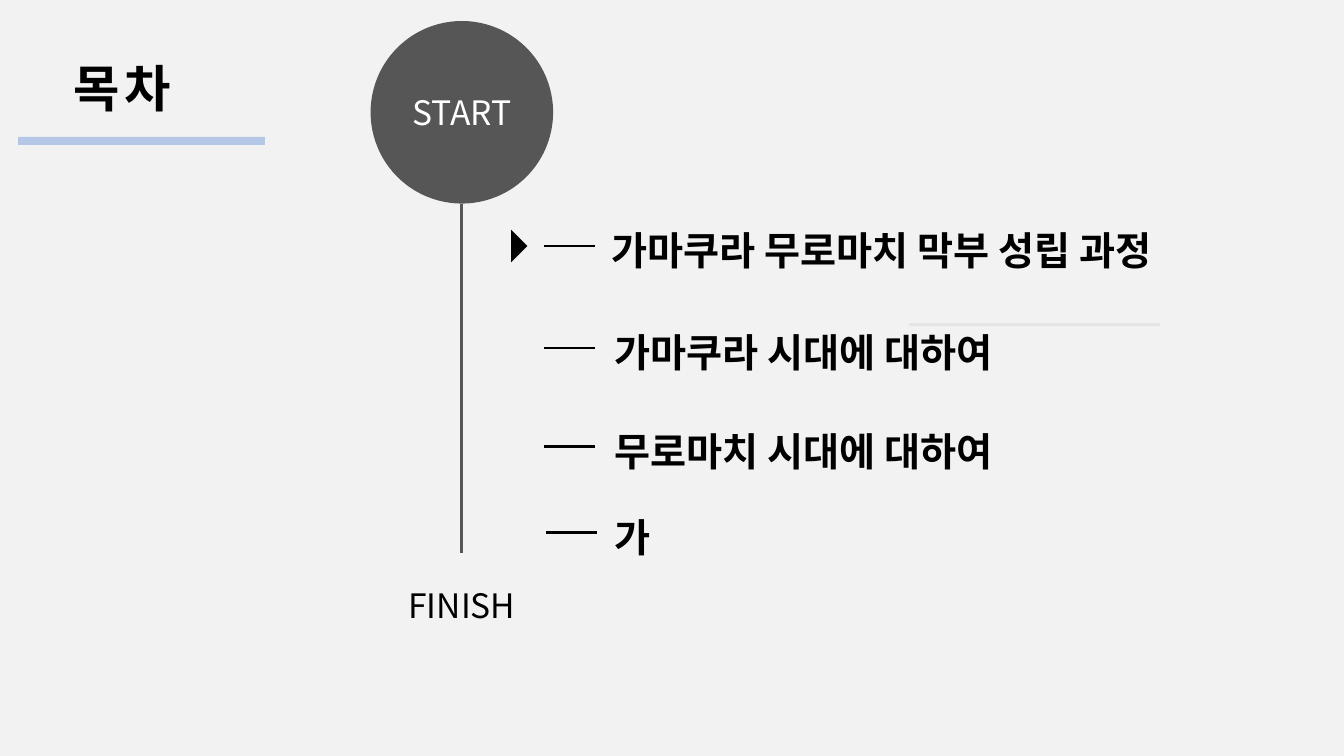
from lxml import etree
from pptx import Presentation
from pptx import util as u
from pptx.dml.color import RGBColor
from pptx.enum import shapes, text
from pptx.oxml import ns

COLOURS = {"page": "F2F2F2", "accent": "B4C7E7", "grey": "565656",
           "rule": "E5E5E5", "black": "000000", "white": "FFFFFF"}
FONT = "Noto Sans CJK KR"
ENTRIES = [
    ("가마쿠라 무로마치 막부 성립 과정", 5.97, 0, 1.6, 16.28),
    ("가마쿠라 시대에 대하여", 8.54, 0, 1.67, 11.4),
    ("무로마치 시대에 대하여", 11.03, 0, 1.67, 11.63),
    ("가", 13.19, 0.05, 1.62, 11.63),
]


def colour(name):
    """Return a named colour of the slide."""
    return RGBColor.from_string(COLOURS[name])


def paint(shape, name):
    """Fill a shape with a flat colour, without outline or shadow."""
    shape.shadow.inherit = False
    shape.fill.solid()
    shape.fill.fore_color.rgb = colour(name)
    shape.line.fill.background()


def add_line(page, left, top, right, bottom, name):
    """Draw a flat two-point line between two positions in centimetres."""
    line = page.shapes.add_connector(
        shapes.MSO_CONNECTOR.STRAIGHT, u.Cm(left), u.Cm(top), u.Cm(right), u.Cm(bottom))
    line.line.color.rgb = colour(name)
    line.line.width = u.Pt(2)
    properties = line._element.find(ns.qn("p:spPr"))
    etree.SubElement(properties, ns.qn("a:effectLst"))


def write(para, words, size, name, bold=False):
    """Add one run in the slide's font and return it."""
    span = para.add_run()
    span.text = words
    span.font.size = u.Pt(size)
    span.font.bold = bold
    span.font.color.rgb = colour(name)
    span.font.name = FONT
    etree.SubElement(span.font._element, ns.qn("a:ea"), typeface=FONT)
    return span


def add_text(page, left, top, width, height):
    """Add a text box with narrow margins and return its frame."""
    box = page.shapes.add_textbox(u.Cm(left), u.Cm(top), u.Cm(width), u.Cm(height))
    frame = box.text_frame
    frame.margin_left = frame.margin_right = u.Cm(0.1)
    frame.margin_top = frame.margin_bottom = u.Cm(0.1)
    return frame


def add_label(page, centre, middle, words, name):
    """Write a centred label around a point on the timeline."""
    width, height = 2.95, 1.24
    frame = add_text(page, centre - width / 2, middle - height / 2, width, height)
    frame.word_wrap = False
    frame.vertical_anchor = text.MSO_ANCHOR.MIDDLE
    para = frame.paragraphs[0]
    para.alignment = text.PP_ALIGN.CENTER
    write(para, words, 24, name)


def add_heading(page, left, top):
    """Place the underlined slide title."""
    bar = page.shapes.add_shape(
        shapes.MSO_SHAPE.RECTANGLE, u.Cm(left), u.Cm(top + 2.15), u.Cm(6.22), u.Cm(0.2))
    paint(bar, "accent")
    title = page.shapes.title
    title.left, title.top = u.Cm(left + 1.14), u.Cm(top)
    title.width, title.height = u.Cm(13.11), u.Cm(1.8)
    frame = title.text_frame
    frame.word_wrap = True
    frame.auto_size = text.MSO_AUTO_SIZE.NONE
    frame.vertical_anchor = text.MSO_ANCHOR.TOP
    para = frame.paragraphs[0]
    para.alignment = text.PP_ALIGN.LEFT
    para.line_spacing = 1.0
    span = write(para, "목차", 36, "black", bold=True)
    span.font._element.set("spc", "300")


def add_timeline(page, left, top, diameter, length):
    """Draw the start circle, the stem below it and the finish label."""
    centre = left + diameter / 2
    foot = top + diameter + length
    add_line(page, centre, top + diameter, centre, foot, "grey")
    circle = page.shapes.add_shape(
        shapes.MSO_SHAPE.OVAL, u.Cm(left), u.Cm(top), u.Cm(diameter), u.Cm(diameter))
    paint(circle, "grey")
    add_label(page, centre, top + diameter / 2, "START", "white")
    add_label(page, centre, foot + 1.31, "FINISH", "black")


def add_entry(page, left, top, words, gap, width):
    """Place one contents entry: a dash followed by bold text."""
    add_line(page, left, top + 0.23, left + 1.28, top + 0.23, "black")
    frame = add_text(page, left + gap, top - 0.36, width, 1.17)
    frame.word_wrap = True
    write(frame.paragraphs[0], words, 28, "black", bold=True)


def add_marker(page, left, middle):
    """Draw the triangle that points at the current entry."""
    half = 0.41
    builder = page.shapes.build_freeform(u.Cm(left), u.Cm(middle - half))
    builder.add_line_segments([(u.Cm(left + half), u.Cm(middle)),
                               (u.Cm(left), u.Cm(middle + half))])
    paint(builder.convert_to_shape(), "black")


def add_contents(page, left):
    """Place the entries, the pale rule and the current-entry marker."""
    add_line(page, left + 9.19, 8.18, left + 15.52, 8.18, "rule")
    for words, top, shift, gap, width in ENTRIES:
        add_entry(page, left + shift, top, words, gap, width)
    add_marker(page, left - 0.84, ENTRIES[0][1] + 0.23)


def main():
    """Build the contents slide and save it."""
    deck = Presentation()
    deck.slide_width, deck.slide_height = u.Cm(33.87), u.Cm(19.05)
    page = deck.slides.add_slide(deck.slide_layouts.get_by_name("Title Only"))
    page.background.fill.solid()
    page.background.fill.fore_color.rgb = colour("page")
    add_heading(page, 0.46, 1.3)
    add_timeline(page, 9.34, 0.53, 4.6, 8.81)
    add_contents(page, 13.72)
    deck.save("out.pptx")


if __name__ == "__main__":
    main()
